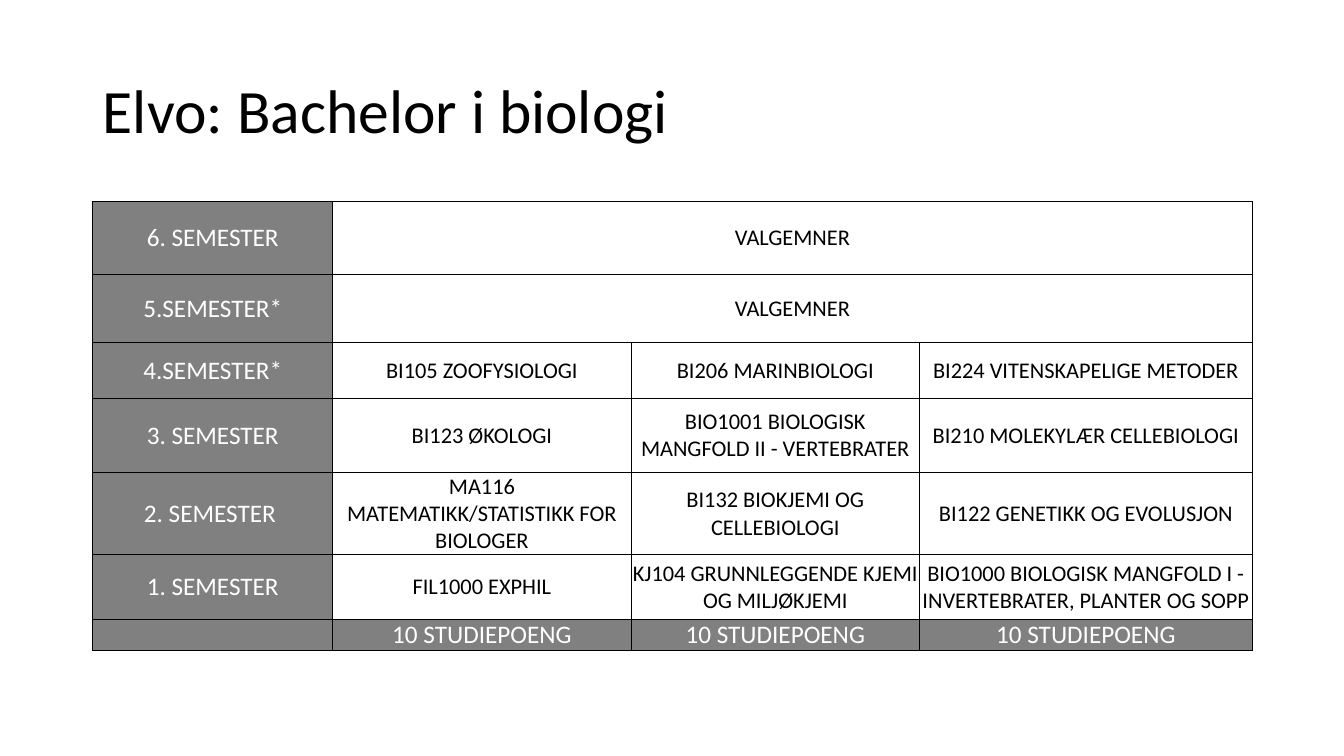
from dataclasses import dataclass

from lxml import etree
from pptx import Presentation
from pptx.dml.color import RGBColor
from pptx.enum.text import MSO_ANCHOR, PP_ALIGN
from pptx.oxml.ns import qn
from pptx.util import Inches, Pt

MIDDLE = MSO_ANCHOR.MIDDLE
LEFT, CENTER = PP_ALIGN.LEFT, PP_ALIGN.CENTER
TITLE_ONLY = 5


@dataclass(frozen=True)
class Theme:
    font: str = "Calibri"
    black: str = "000000"
    white: str = "FFFFFF"
    gray: str = "808080"
    title_size: int = 44
    heading_size: int = 18
    course_size: int = 16
    border_width: int = 1


THEME = Theme()

COLUMN_WIDTHS = [2.38, 2.96, 2.86, 3.3]
ROW_HEIGHTS = [0.72, 0.68, 0.55, 0.74, 0.62, 0.64, 0.21]

# A row with a single course spans all course columns
SEMESTERS = [
    ("6. SEMESTER", ["VALGEMNER"]),
    ("5.SEMESTER*", ["VALGEMNER"]),
    ("4.SEMESTER*", ["BI105 ZOOFYSIOLOGI", "BI206 MARINBIOLOGI",
                     "BI224 VITENSKAPELIGE METODER"]),
    ("3. SEMESTER", ["BI123 ØKOLOGI",
                     "BIO1001 BIOLOGISK MANGFOLD II - VERTEBRATER",
                     "BI210 MOLEKYLÆR CELLEBIOLOGI"]),
    ("2. SEMESTER ", ["MA116 MATEMATIKK/STATISTIKK FOR BIOLOGER",
                      "BI132 BIOKJEMI OG CELLEBIOLOGI",
                      "BI122 GENETIKK OG EVOLUSJON"]),
    ("1. SEMESTER", ["FIL1000 EXPHIL",
                     "KJ104 GRUNNLEGGENDE KJEMI OG MILJØKJEMI",
                     "BIO1000 BIOLOGISK MANGFOLD I - INVERTEBRATER, PLANTER OG SOPP"]),
]
CREDITS = ["10 STUDIEPOENG"] * 3


def format_paragraph(paragraph, size, color, alignment):
    paragraph.alignment = alignment
    paragraph.font.name = THEME.font
    paragraph.font.size = Pt(size)
    paragraph.font.color.rgb = RGBColor.from_string(color)


def add_title(slide, text):
    title = slide.shapes.title
    title.left, title.top = Inches(0.92), Inches(0.4)
    title.width, title.height = Inches(11.5), Inches(1.45)
    title.text_frame.text = text
    title.text_frame.vertical_anchor = MIDDLE
    paragraph = title.text_frame.paragraphs[0]
    paragraph.line_spacing = 0.9
    format_paragraph(paragraph, THEME.title_size, THEME.black, LEFT)


def add_borders(cell):
    properties = cell._tc.get_or_add_tcPr()
    for side in ("a:lnL", "a:lnR", "a:lnT", "a:lnB"):
        line = etree.SubElement(properties, qn(side), w=str(Pt(THEME.border_width)))
        fill = etree.SubElement(line, qn("a:solidFill"))
        etree.SubElement(fill, qn("a:srgbClr"), val=THEME.black)


def fill_cell(cell, text, is_heading):
    cell.text = text
    cell.vertical_anchor = MIDDLE
    cell.fill.solid()
    background = THEME.gray if is_heading else THEME.white
    cell.fill.fore_color.rgb = RGBColor.from_string(background)
    size = THEME.heading_size if is_heading else THEME.course_size
    color = THEME.white if is_heading else THEME.black
    format_paragraph(cell.text_frame.paragraphs[0], size, color, CENTER)


def add_plan_table(slide):
    table = slide.shapes.add_table(
        len(ROW_HEIGHTS), len(COLUMN_WIDTHS),
        Inches(0.92), Inches(2), Inches(11.5), Inches(4.42)).table
    table.first_row = table.horz_banding = False
    for column, width in zip(table.columns, COLUMN_WIDTHS):
        column.width = Inches(width)
    for row, height in zip(table.rows, ROW_HEIGHTS):
        row.height = Inches(height)
    for cell in table.iter_cells():
        cell.margin_left = cell.margin_right = 0
        cell.margin_top = cell.margin_bottom = 0
        add_borders(cell)

    # Semester rows
    last_column = len(COLUMN_WIDTHS) - 1
    for row, (semester, courses) in enumerate(SEMESTERS):
        fill_cell(table.cell(row, 0), semester, True)
        for column, course in enumerate(courses, start=1):
            fill_cell(table.cell(row, column), course, False)
        if len(courses) == 1:
            table.cell(row, 1).merge(table.cell(row, last_column))

    # Credits row
    for column, credit in enumerate(["", *CREDITS]):
        fill_cell(table.cell(len(SEMESTERS), column), credit, True)


def main():
    presentation = Presentation()
    presentation.slide_width = Inches(13.33)
    presentation.slide_height = Inches(7.5)
    slide = presentation.slides.add_slide(presentation.slide_layouts[TITLE_ONLY])
    add_title(slide, "Elvo: Bachelor i biologi")
    add_plan_table(slide)
    presentation.save("out.pptx")


if __name__ == "__main__":
    main()
